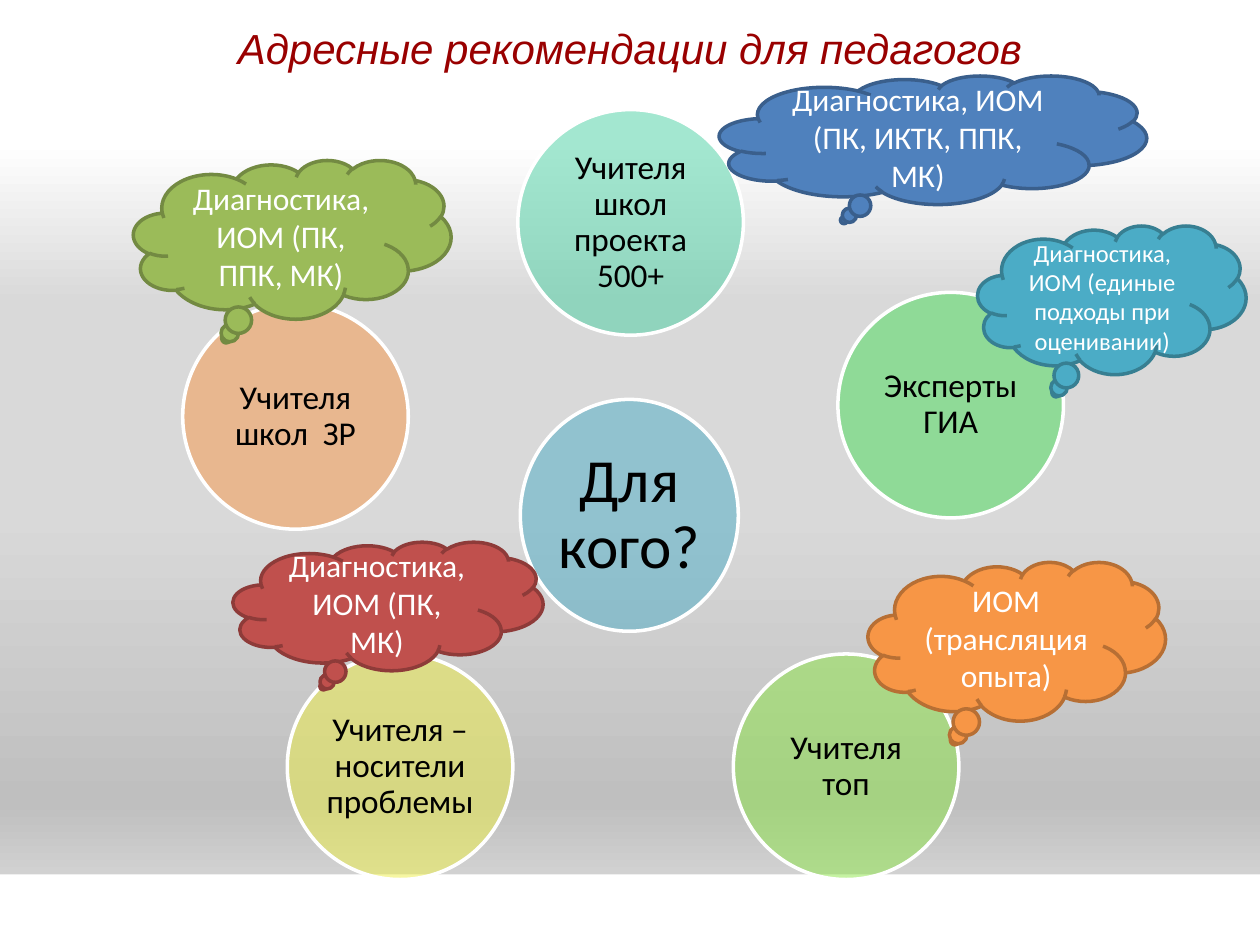
from lxml.etree import SubElement
from pptx import Presentation
from pptx.dml.color import RGBColor
from pptx.enum.shapes import MSO_SHAPE
from pptx.enum.text import MSO_ANCHOR, PP_ALIGN
from pptx.oxml.ns import qn
from pptx.util import Inches, Pt

WHITE = RGBColor(0xFF, 0xFF, 0xFF)
BLACK = RGBColor(0x00, 0x00, 0x00)
DARK_RED = RGBColor(0x99, 0x00, 0x00)
BLUE = RGBColor(0x4F, 0x81, 0xBD)
BLUE_EDGE = RGBColor(0x3A, 0x5F, 0x8C)
TEAL = RGBColor(0x4B, 0xAC, 0xC6)
TEAL_EDGE = RGBColor(0x37, 0x7F, 0x92)
ORANGE = RGBColor(0xF7, 0x96, 0x46)
ORANGE_EDGE = RGBColor(0xB7, 0x6F, 0x34)
RED = RGBColor(0xC0, 0x50, 0x4D)
RED_EDGE = RGBColor(0x8E, 0x3B, 0x39)
OLIVE = RGBColor(0x9B, 0xBB, 0x59)
OLIVE_EDGE = RGBColor(0x73, 0x8A, 0x42)
MINT = RGBColor(0x49, 0xD1, 0xA3)
GREEN = RGBColor(0x47, 0xDC, 0x57)
LIME = RGBColor(0x8D, 0xE6, 0x46)
YELLOW = RGBColor(0xEE, 0xEF, 0x46)

BACKGROUND_STOPS = [(0, "FFFFFF"), (15, "FFFFFF"), (32, "D9D9D9"),
                    (54, "D9D9D9"), (85, "BFBFBF"), (100, "E6E6E6")]

CIRCLE_SIZE = 1.79
# Text, left, top, fill
CIRCLES = [
    ("Учителя школ проекта 500+", 4.11, 0.87, MINT),
    ("Эксперты ГИА", 6.65, 2.32, GREEN),
    ("Учителя топ", 5.82, 5.19, LIME),
    ("Учителя – носители проблемы", 2.28, 5.19, YELLOW),
    ("Учителя школ  ЗР", 1.45, 2.41, ORANGE),
]
# Text, box, fill, outline, text size
CLOUDS = [
    ("Диагностика, ИОМ (ПК, ИКТК, ППК, МК)", (5.71, 0.6, 3.39, 1.02), BLUE, BLUE_EDGE, 18),
    ("Диагностика, ИОМ (единые подходы при оценивании)", (7.76, 1.79, 2.13, 1.18),
     TEAL, TEAL_EDGE, 14),
    ("ИОМ (трансляция опыта)", (6.89, 4.46, 2.36, 1.26), ORANGE, ORANGE_EDGE, 18),
    ("Диагностика, ИОМ (ПК, МК)", (1.85, 4.3, 2.46, 1.02), RED, RED_EDGE, 18),
    ("Диагностика, ИОМ (ПК, ППК, МК)", (1.06, 1.27, 2.52, 1.26), OLIVE, OLIVE_EDGE, 18),
]


class SlideBuilder:
    """Holds the current slide and the shared style."""

    body_font = "Calibri"
    title_font = "Arial"
    line_width = Pt(2)

    def __init__(self, slide):
        self.slide = slide

    def background(self, stops):
        fill = self.slide.background.fill
        fill.gradient()
        fill.gradient_angle = 270
        stop_list = next(self.slide.element.iter(qn("a:gsLst")))
        for old_stop in list(stop_list):
            stop_list.remove(old_stop)
        for percent, color in stops:
            stop = SubElement(stop_list, qn("a:gs"), pos=str(percent * 1000))
            SubElement(stop, qn("a:srgbClr"), val=color)

    def text(self, shape, text, size, color, font):
        frame = shape.text_frame
        frame.text = text
        frame.word_wrap = True
        frame.vertical_anchor = MSO_ANCHOR.MIDDLE
        paragraph = frame.paragraphs[0]
        paragraph.alignment = PP_ALIGN.CENTER
        run_font = paragraph.runs[0].font
        run_font.name, run_font.size = font, Pt(size)
        run_font.color.rgb = color
        return paragraph

    def title(self, text, left, top, width, height):
        title = self.slide.shapes.title
        title.left, title.top = Inches(left), Inches(top)
        title.width, title.height = Inches(width), Inches(height)
        title.fill.solid()
        title.fill.fore_color.rgb = WHITE
        paragraph = self.text(title, text, 24, DARK_RED, self.title_font)
        paragraph.runs[0].font.italic = True

    def shape(self, kind, box, fill, outline=None):
        shape = self.slide.shapes.add_shape(kind, *map(Inches, box))
        shape.shadow.inherit = False
        shape.fill.solid()
        shape.fill.fore_color.rgb = fill
        if outline is None:
            shape.line.fill.background()
        else:
            shape.line.color.rgb = outline
            shape.line.width = self.line_width
        return shape

    def circle(self, text, box, fill, size, inset):
        circle = self.shape(MSO_SHAPE.OVAL, box, fill, WHITE)
        color = circle.fill._xPr.find(qn("a:solidFill"))[0]
        SubElement(color, qn("a:alpha"), val="50000")
        frame = circle.text_frame
        frame.margin_left = frame.margin_right = Inches(inset)
        frame.margin_top = frame.margin_bottom = Inches(inset)
        self.text(circle, text, size, BLACK, self.body_font).line_spacing = 0.9

    def cloud(self, text, box, fill, outline, size):
        cloud = self.shape(MSO_SHAPE.CLOUD_CALLOUT, box, fill, outline)
        self.text(cloud, text, size, WHITE, self.body_font)


def main():
    presentation = Presentation()
    presentation.slide_width, presentation.slide_height = Inches(10), Inches(7.5)
    builder = SlideBuilder(presentation.slides.add_slide(presentation.slide_layouts[5]))

    # Background, bottom band and title
    builder.background(BACKGROUND_STOPS)
    builder.shape(MSO_SHAPE.RECTANGLE, (0, 6.94, 10, 0.56), WHITE)
    builder.title("Адресные рекомендации для педагогов", 0, 0, 10, 0.76)

    # Central question and the groups of teachers around it
    builder.circle("Для кого?", (4.13, 3.17, 1.73, 1.84), TEAL, 35, 0.05)
    for text, left, top, fill in CIRCLES:
        builder.circle(text, (left, top, CIRCLE_SIZE, CIRCLE_SIZE), fill, 19, 0.03)

    # Recommendations for each group
    for cloud in CLOUDS:
        builder.cloud(*cloud)

    presentation.save("out.pptx")


if __name__ == "__main__":
    main()
